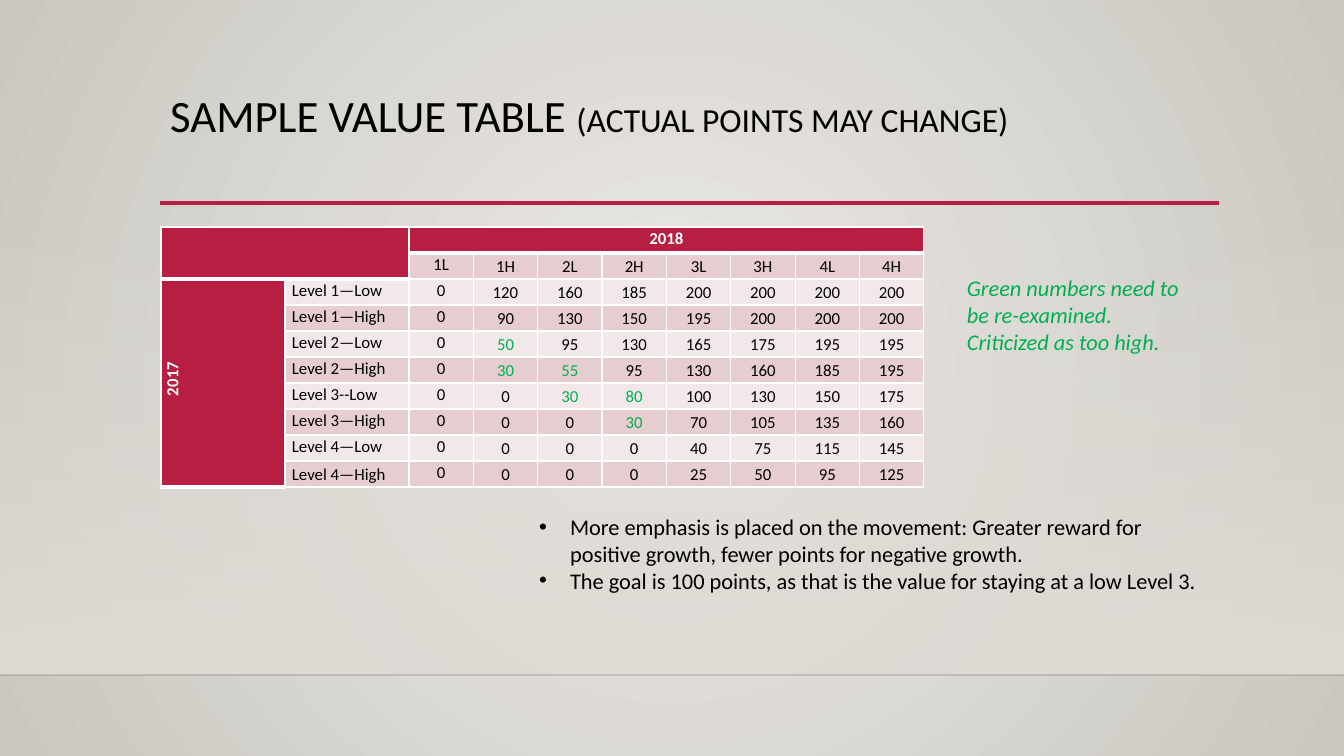
"""Build a slide with a sample value table of growth points."""
from lxml import etree
from pptx import Presentation
from pptx.dml.color import RGBColor
from pptx.enum.shapes import MSO_CONNECTOR, MSO_SHAPE
from pptx.enum.text import MSO_ANCHOR, MSO_AUTO_SIZE, PP_ALIGN
from pptx.oxml import parse_xml
from pptx.oxml.ns import nsdecls, qn
from pptx.util import Emu, Pt

STRAIGHT = MSO_CONNECTOR.STRAIGHT
RECTANGLE = MSO_SHAPE.RECTANGLE
TOP, MIDDLE = MSO_ANCHOR.TOP, MSO_ANCHOR.MIDDLE
LEFT, CENTER = PP_ALIGN.LEFT, PP_ALIGN.CENTER
GROW, FIXED = MSO_AUTO_SIZE.SHAPE_TO_FIT_TEXT, MSO_AUTO_SIZE.NONE

EMU_PER_PX = 914400 / 100.8
FONT = "Calibri"
COLORS = {
    "black": "000000", "white": "FFFFFF", "red": "B71E42", "green": "00B050",
    "dark_band": "E6CDCF", "light_band": "F3E8E9", "floor_line": "000001",
    "glow": "ECEAE7", "edge": "CAC7C1", "haze": "DFDBD5",
}
LEVELS = ["1L", "1H", "2L", "2H", "3L", "3H", "4L", "4H"]
POINTS = [
    ("Level 1—Low", [0, 120, 160, 185, 200, 200, 200, 200]),
    ("Level 1—High", [0, 90, 130, 150, 195, 200, 200, 200]),
    ("Level 2—Low", [0, 50, 95, 130, 165, 175, 195, 195]),
    ("Level 2—High", [0, 30, 55, 95, 130, 160, 185, 195]),
    ("Level 3--Low", [0, 0, 30, 80, 100, 130, 150, 175]),
    ("Level 3—High", [0, 0, 0, 30, 70, 105, 135, 160]),
    ("Level 4—Low", [0, 0, 0, 0, 40, 75, 115, 145]),
    ("Level 4—High", [0, 0, 0, 0, 25, 50, 95, 125]),
]
TOO_HIGH = {(4, 3), (5, 3), (5, 4), (6, 4), (6, 5), (7, 5)}
EMPHASIS = [
    "More emphasis is placed on the movement: Greater reward for "
    "positive growth, fewer points for negative growth.",
    "The goal is 100 points, as that is the value for staying at a low Level 3.",
]


def px(length):
    return Emu(round(length * EMU_PER_PX))


def rgb(name):
    return RGBColor.from_string(COLORS[name])


def gradient(stops, direction):
    """Return a gradient fill from (position, colour, opacity) stops."""
    marks = "".join(
        f'<a:gs pos="{pos * 1000}"><a:srgbClr val="{COLORS[name]}">'
        f'<a:alpha val="{opacity * 1000}"/></a:srgbClr></a:gs>'
        for pos, name, opacity in stops)
    return (f'<a:gradFill {nsdecls("a")} rotWithShape="1">'
            f'<a:gsLst>{marks}</a:gsLst>{direction}</a:gradFill>')


def paint_background(page):
    circle = ('<a:path path="circle"><a:fillToRect l="50000" t="50000" '
              'r="50000" b="50000"/></a:path>')
    fill = gradient([(0, "glow", 100), (100, "edge", 100)], circle)
    page.element.cSld.insert(0, parse_xml(
        f'<p:bg {nsdecls("p", "a")}><p:bgPr>{fill}<a:effectLst/></p:bgPr></p:bg>'))


def add_haze(page, left, top, width, height):
    haze = page.shapes.add_shape(RECTANGLE, px(left), px(top), px(width), px(height))
    haze.shadow.inherit = False
    haze.line.fill.background()
    fill = gradient([(0, "haze", 0), (100, "haze", 100)],
                    '<a:lin ang="5400000" scaled="0"/>')
    haze.element.spPr.find(qn("a:prstGeom")).addnext(parse_xml(fill))


def add_rule(page, left, right, y, color, weight, opacity=100):
    rule = page.shapes.add_connector(STRAIGHT, px(left), px(y), px(right), px(y))
    rule.line.color.rgb = rgb(color)
    rule.line.width = Pt(weight)
    swatch = rule.element.spPr.find(".//" + qn("a:srgbClr"))
    etree.SubElement(swatch, qn("a:alpha"), val=str(opacity * 1000))
    etree.SubElement(rule.element.spPr, qn("a:effectLst"))


def place(box, left, top, width, height, auto_size):
    """Move a text box to the front and return its text frame."""
    box.left, box.top, box.width, box.height = map(px, (left, top, width, height))
    box.element.getparent().append(box.element)
    frame = box.text_frame
    frame.word_wrap = True
    frame.auto_size = auto_size
    frame.vertical_anchor = TOP
    return frame


def add_span(para, text, size, color="black", bold=False, italic=False):
    span = para.add_run()
    span.text = text
    font = span.font
    font.name, font.size = FONT, Pt(size)
    font.bold, font.italic = bold, italic
    font.color.rgb = rgb(color)


def add_bullets(frame, items):
    for index, item in enumerate(items):
        para = frame.add_paragraph() if index else frame.paragraphs[0]
        props = para._p.get_or_add_pPr()
        props.set("marL", str(px(31)))
        props.set("indent", str(-px(31)))
        etree.SubElement(props, qn("a:buFont"), typeface="Arial")
        etree.SubElement(props, qn("a:buChar"), char="•")
        para.space_before = Pt(0)
        add_span(para, item, 16)


def fill_cell(cell, text, fill, color, bold, align, anchor):
    """Format one table cell with its borders, fill and text."""
    props = cell._tc.get_or_add_tcPr()
    for side in "LRTB":
        weight = 3 if side == "B" and fill == "red" else 1
        props.append(parse_xml(
            f'<a:ln{side} {nsdecls("a")} w="{Pt(weight)}"><a:solidFill>'
            f'<a:srgbClr val="{COLORS["white"]}"/></a:solidFill></a:ln{side}>'))
    cell.fill.solid()
    cell.fill.fore_color.rgb = rgb(fill)
    cell.margin_left = cell.margin_right = px(7)
    cell.margin_top = cell.margin_bottom = 0
    cell.vertical_anchor = anchor
    para = cell.text_frame.paragraphs[0]
    para.alignment = align
    para.line_spacing = 1.07
    para.font.size = Pt(12)
    if text:
        add_span(para, text, 12, color, bold)


def add_value_table(page, left, top):
    rows = [["", "", "2018"] + [""] * 7, ["", ""] + LEVELS]
    rows += [["", label] + [str(value) for value in values] for label, values in POINTS]
    rows[2][0] = "2017"
    widths = [124] * 2 + [64.4] * 8
    table = page.shapes.add_table(len(rows), len(widths), px(left), px(top),
                                  px(sum(widths)), px(26 * len(rows))).table
    table.first_row = table.horz_banding = False
    for column, width in zip(table.columns, widths):
        column.width = px(width)
    for r, row in enumerate(rows):
        table.rows[r].height = px(26)
        for c, text in enumerate(row):
            header = r == 0 or c == 0 or (r == 1 and c == 1)
            band = "light_band" if r % 2 == 0 else "dark_band"
            color = "green" if (r, c) in TOO_HIGH else "black"
            middle = r > 0 and (c == 0 or c > 2 or (c == 1 and r == len(rows) - 1))
            fill_cell(table.cell(r, c), text, "red" if header else band,
                      "white" if header else color, header,
                      LEFT if c == 1 else CENTER, MIDDLE if middle else TOP)
    for first, last in [((0, 0), (1, 1)), ((0, 2), (0, 9)), ((2, 0), (9, 0))]:
        table.cell(*first).merge(table.cell(*last))
    year = table.cell(2, 0)
    year._tc.tcPr.set("vert", "vert270")
    year.text_frame.paragraphs[0]._p.pPr.set("marL", str(px(8)))


def main():
    deck = Presentation()
    deck.slide_width, deck.slide_height = px(1344), px(756)
    page = deck.slides.add_slide(deck.slide_layouts[1])
    title, body = page.placeholders
    paint_background(page)
    add_haze(page, 0, 223, 1344, 452)
    add_rule(page, 0, 1344, 675, "floor_line", 1, 20)
    add_rule(page, 160, 1219, 203, "red", 2.5)

    heading = place(title, 160, 89, 1058, 116, FIXED).paragraphs[0]
    heading.alignment = LEFT
    heading.line_spacing = 0.9
    add_span(heading, "SAMPLE VALUE TABLE ", 32)
    add_span(heading, "(ACTUAL POINTS MAY CHANGE)", 24)

    add_value_table(page, 161, 227)
    add_bullets(place(body, 529, 508, 691, 92, GROW), EMPHASIS)

    note = page.shapes.add_textbox(0, 0, 0, 0)
    remark = place(note, 957, 269, 252, 92, GROW).paragraphs[0]
    add_span(remark, "Green numbers need to be re-examined. Criticized as too high.",
             16, "green", italic=True)
    deck.save("out.pptx")


if __name__ == "__main__":
    main()
